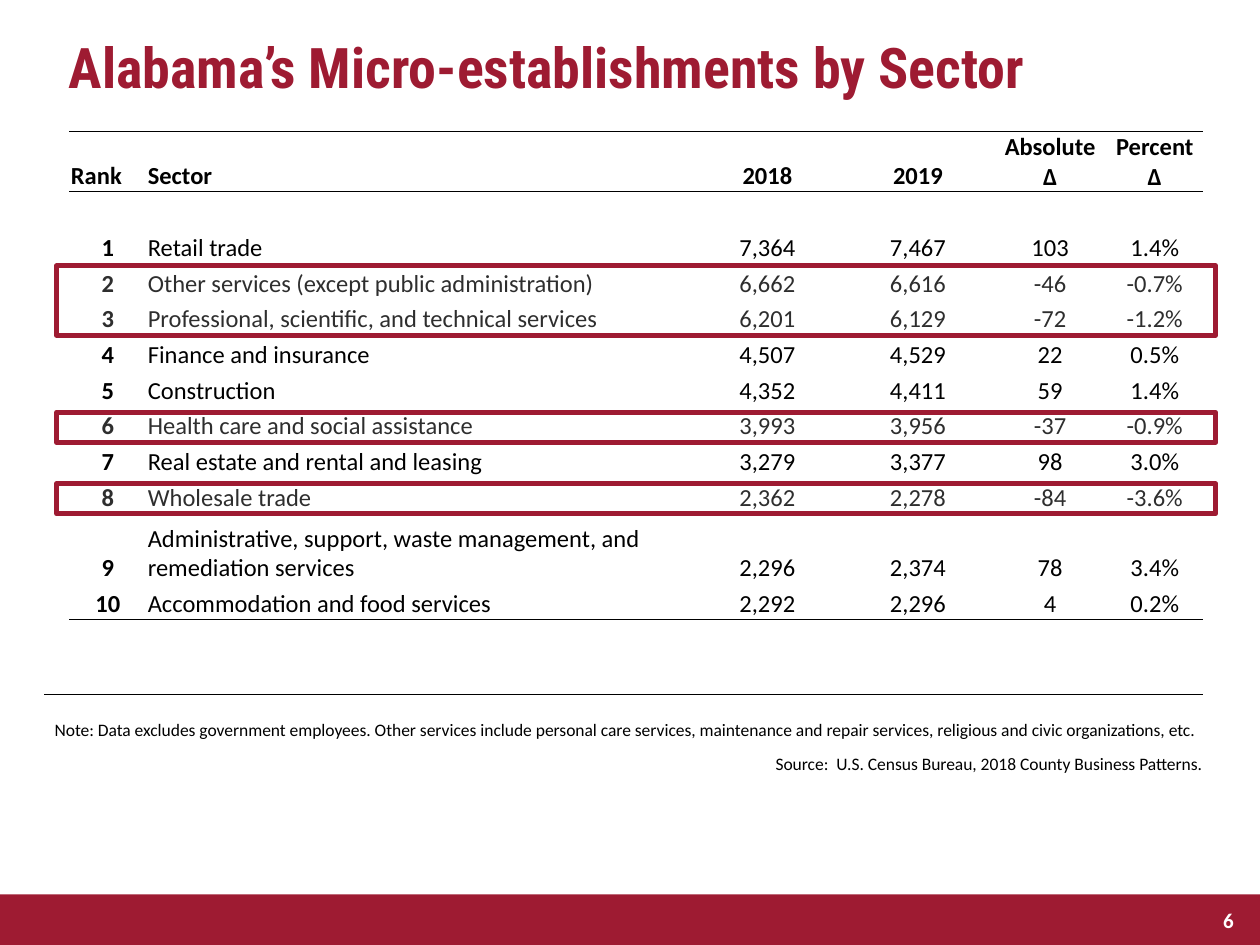
from lxml.etree import SubElement
from pptx import Presentation
from pptx.dml.color import RGBColor
from pptx.enum.shapes import MSO_SHAPE
from pptx.enum.text import MSO_ANCHOR, PP_ALIGN
from pptx.oxml.ns import qn
from pptx.util import Cm, Pt

COLORS = {"crimson": "9E1B32", "white": "FFFFFF", "black": "000000"}
HEADER = ("Rank", "Sector", "2018", "2019", "Absolute Δ", "Percent Δ")
SECTORS = [
    ("1", "Retail trade", "7,364", "7,467", "103", "1.4%"),
    ("2", "Other services (except public administration)", "6,662", "6,616", "-46", "-0.7%"),
    ("3", "Professional, scientific, and technical services", "6,201", "6,129", "-72", "-1.2%"),
    ("4", "Finance and insurance", "4,507", "4,529", "22", "0.5%"),
    ("5", "Construction", "4,352", "4,411", "59", "1.4%"),
    ("6", "Health care and social assistance", "3,993", "3,956", "-37", "-0.9%"),
    ("7", "Real estate and rental and leasing", "3,279", "3,377", "98", "3.0%"),
    ("8", "Wholesale trade", "2,362", "2,278", "-84", "-3.6%"),
    ("9", "Administrative, support, waste management, and remediation services",
     "2,296", "2,374", "78", "3.4%"),
    ("10", "Accommodation and food services", "2,292", "2,296", "4", "0.2%"),
]
SECTOR_COLUMNS = (1.55, 11.02, 3, 3.07, 2.26, 1.96)
ROW_HEIGHT = 0.72
SECTOR_ROWS = [1.22] + [ROW_HEIGHT] * 9 + [1.42, ROW_HEIGHT]
NOTES = [
    "Note: Data excludes government employees. Other services include personal care services, "
    "maintenance and repair services, religious and civic organizations, etc.",
    "Source:  U.S. Census Bureau, 2018 County Business Patterns.",
]
HIGHLIGHTS = ((5.36, 1.4), (8.31, 0.61), (9.75, 0.61))


class SlideBuilder:
    """Hold the text style and the current slide, and add elements to it."""

    def __init__(self, slide, font="Calibri"):
        self.slide = slide
        self.font = font

    def style(self, paragraph, size, color="black", bold=False, align=PP_ALIGN.LEFT, font=None):
        paragraph.alignment = align
        paragraph.font.name = font or self.font
        paragraph.font.size = Pt(size)
        paragraph.font.bold = bold
        paragraph.font.color.rgb = RGBColor.from_string(COLORS[color])

    def text(self, box, content, size, anchor=MSO_ANCHOR.TOP, spacing=None, **style):
        frame = self.slide.shapes.add_textbox(*map(Cm, box)).text_frame
        frame.word_wrap = True
        frame.vertical_anchor = anchor
        paragraph = frame.paragraphs[0]
        paragraph.text = content
        paragraph.line_spacing = spacing
        self.style(paragraph, size, **style)

    def rectangle(self, box, fill, line=None, opacity=None):
        shape = self.slide.shapes.add_shape(MSO_SHAPE.RECTANGLE, *map(Cm, box))
        shape.shadow.inherit = False
        shape.fill.solid()
        shape.fill.fore_color.rgb = RGBColor.from_string(COLORS[fill])
        if opacity:
            color = shape.fill._xPr.find(qn("a:solidFill"))[0]
            SubElement(color, qn("a:alpha"), val=str(opacity * 1000))
        if line:
            shape.line.color.rgb = RGBColor.from_string(COLORS[line])
            shape.line.width = Pt(2.75)
        else:
            shape.line.fill.background()

    def table(self, left, top, columns, rows):
        table = self.slide.shapes.add_table(
            len(rows), len(columns), Cm(left), Cm(top), Cm(sum(columns)), Cm(sum(rows))).table
        table.first_row = table.horz_banding = False
        for column, width in zip(table.columns, columns):
            column.width = Cm(width)
        for row, height in zip(table.rows, rows):
            row.height = Cm(height)
        return table

    def cell(self, cell, content, size, borders="", border_width=0.5, right=0.03, **style):
        cell.margin_left = cell.margin_top = Cm(0.03)
        cell.margin_right = Cm(right)
        cell.margin_bottom = 0
        cell.vertical_anchor = MSO_ANCHOR.BOTTOM
        paragraph = cell.text_frame.paragraphs[0]
        if content:
            paragraph.text = content
        else:
            SubElement(paragraph._p, qn("a:endParaRPr"), sz=str(size * 100))
        self.style(paragraph, size, **style)
        properties = cell._tc.get_or_add_tcPr()
        for side in "LRTB":
            if side in borders:
                line = SubElement(properties, qn(f"a:ln{side}"), w=str(Pt(border_width)))
                fill = SubElement(line, qn("a:solidFill"))
                SubElement(fill, qn("a:srgbClr"), val=COLORS["black"])
            else:
                line = SubElement(properties, qn(f"a:ln{side}"))
                SubElement(line, qn("a:noFill"))
        cell.fill.background()


def main():
    presentation = Presentation()
    presentation.slide_width = Cm(25.4)
    presentation.slide_height = Cm(19.05)
    builder = SlideBuilder(presentation.slides.add_slide(presentation.slide_layouts[6]))

    builder.rectangle((0, 18.03, 25.4, 1.02), "crimson")
    builder.text((24.05, 18.03, 1.07, 1.02), "6", 12, MSO_ANCHOR.MIDDLE,
                 color="white", bold=True, align=PP_ALIGN.RIGHT)
    builder.text((1.14, 0.69, 22.86, 2.24), "Alabama’s Micro-establishments by Sector", 32,
                 spacing=0.9, color="crimson", bold=True, font="Roboto Condensed")

    notes = builder.table(0.89, 14, (23.37,), (0.94, 0.69))
    for index, (note, right) in enumerate(zip(NOTES, (0.18, 0.03))):
        builder.cell(notes.cell(index, 0), note, 10, "" if index else "T", 1, right,
                     align=PP_ALIGN.RIGHT)

    sectors = builder.table(1.4, 2.64, SECTOR_COLUMNS, SECTOR_ROWS)
    borders = {0: "TB", 1: "T", len(SECTOR_ROWS) - 1: "B"}
    for row, values in enumerate([HEADER, [""] * len(HEADER), *SECTORS]):
        for column, value in enumerate(values):
            left_aligned = column == 1 or (row == 0 and column == 0)
            builder.cell(sectors.cell(row, column), value, 14, borders.get(row, ""),
                         bold=row == 0 or column == 0,
                         align=PP_ALIGN.LEFT if left_aligned else PP_ALIGN.CENTER)

    for top, height in HIGHLIGHTS:
        builder.rectangle((1.14, top, 23.37, height), "white", "crimson", 18)

    presentation.save("out.pptx")


if __name__ == "__main__":
    main()
